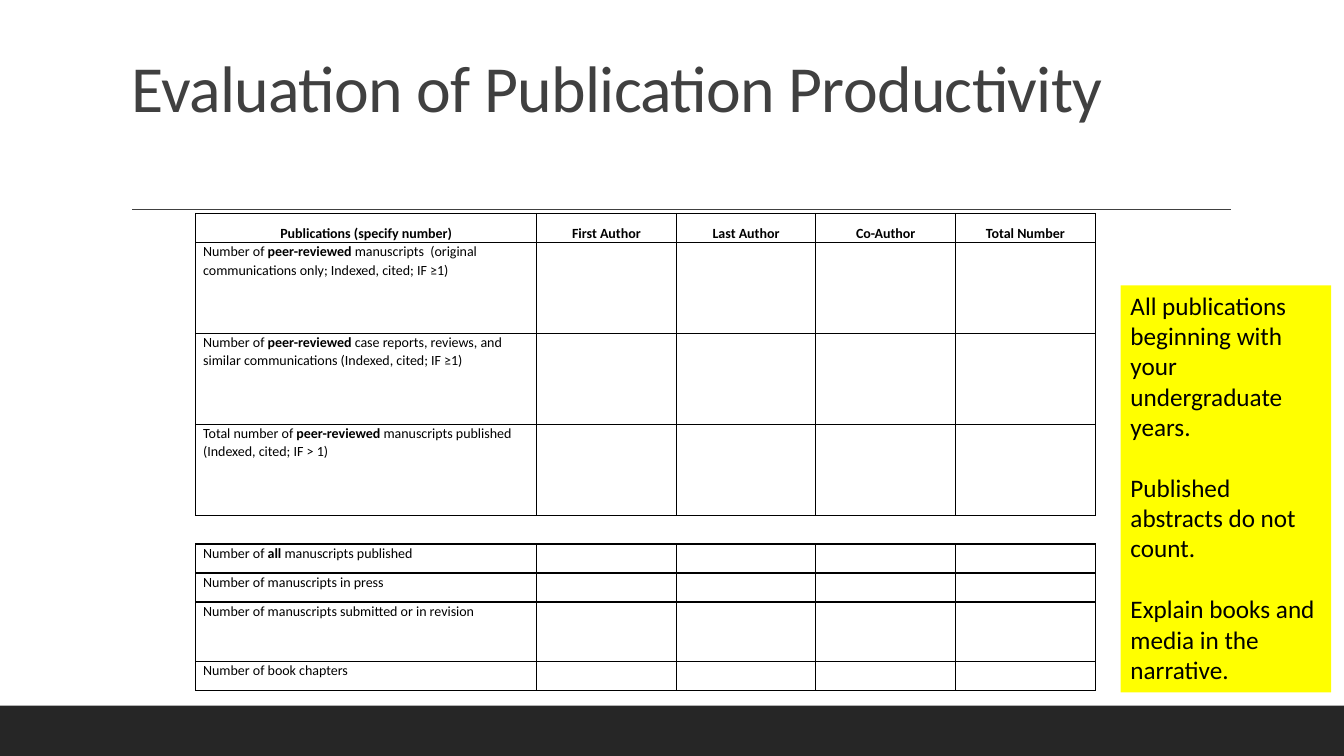
from lxml.etree import SubElement
from pptx import Presentation
from pptx.dml.color import RGBColor
from pptx.enum.shapes import MSO_CONNECTOR, MSO_SHAPE
from pptx.enum.text import MSO_ANCHOR, PP_ALIGN
from pptx.oxml import parse_xml
from pptx.oxml.ns import nsdecls, qn
from pptx.util import Cm, Pt

HEADERS = ["Publications (specify number)", "First Author", "Last Author",
           "Co-Author", "Total Number"]
ROWS = [
    (2.29, "Number of *peer-reviewed* manuscripts  (original communications only; "
           "Indexed, cited; IF ≥1)"),
    (2.29, "Number of *peer-reviewed* case reports, reviews, and similar "
           "communications (Indexed, cited; IF ≥1)"),
    (2.29, "Total number of *peer-reviewed* manuscripts published "
           "(Indexed, cited; IF > 1)"),
    (0.73, ""),
    (0.73, "Number of* all *manuscripts published"),
    (0.73, "Number of manuscripts in press"),
    (1.5, "Number of manuscripts submitted or in revision"),
    (0.73, "Number of book chapters"),
]
NOTES = ["All publications beginning with your undergraduate years.",
         "Published abstracts do not count.",
         "Explain books and media in the narrative."]


def rgb(value):
    """Return the colour for a hex string."""
    return RGBColor.from_string(value)


def add_text(p, text, size, color="000000", align=PP_ALIGN.LEFT, spacing=1.0,
             before=0, after=0, tracking=0):
    """Fill a paragraph; parts between asterisks are bold."""
    p.alignment, p.line_spacing = align, spacing
    p.space_before, p.space_after = Pt(before), Pt(after)
    if not text:
        SubElement(p._p, qn("a:endParaRPr"), sz=str(size * 100))
        return
    for i, part in enumerate(text.split("*")):
        if part:
            r = p.add_run()
            r.text = part
            r.font.name, r.font.size = "Calibri", Pt(size)
            r.font.bold = i % 2 == 1
            r.font.color.rgb = rgb(color)
            if tracking:
                r._r.get_or_add_rPr().set("spc", str(round(tracking * 100)))


def add_box(s, x, y, w, h, fill):
    """Add a plain filled rectangle."""
    sp = s.shapes.add_shape(MSO_SHAPE.RECTANGLE, Cm(x), Cm(y), Cm(w), Cm(h))
    sp.shadow.inherit = False
    sp.fill.solid()
    sp.fill.fore_color.rgb = rgb(fill)
    sp.line.fill.background()
    return sp


def add_title(s, text):
    """Add the slide title."""
    sp = s.shapes.add_textbox(Cm(3.07), Cm(0.81), Cm(27.94), Cm(2.51))
    tf = sp.text_frame
    tf.word_wrap = True
    tf.vertical_anchor = MSO_ANCHOR.BOTTOM
    add_text(tf.paragraphs[0], text, 47, "404040", spacing=0.9, tracking=-0.5)


def add_rule(s, x1, x2, y):
    """Add a thin horizontal rule."""
    line = s.shapes.add_connector(MSO_CONNECTOR.STRAIGHT, Cm(x1), Cm(y), Cm(x2), Cm(y))
    line.line.color.rgb = rgb("404040")
    line.line.width = Pt(1)
    SubElement(line._element.spPr, qn("a:effectLst"))


def set_borders(cell, sides):
    """Draw black borders on the given sides and none on the others."""
    tcPr = cell._tc.get_or_add_tcPr()
    for i, side in enumerate("LRTB"):
        fill = ('<a:solidFill><a:srgbClr val="000000"/></a:solidFill>'
                if side in sides else "<a:noFill/>")
        tcPr.insert(i, parse_xml(
            f'<a:ln{side} {nsdecls("a")} w="12700">{fill}</a:ln{side}>'))


def format_cell(cell, text, sides="LRTB", anchor=MSO_ANCHOR.TOP, align=PP_ALIGN.LEFT):
    """Write and style one table cell."""
    cell.margin_left = cell.margin_right = Cm(0.19)
    cell.margin_top = cell.margin_bottom = 0
    cell.vertical_anchor = anchor
    cell.fill.background()
    add_text(cell.text_frame.paragraphs[0], text, 10, align=align, spacing=1.07, after=8)
    set_borders(cell, sides)


def add_publications(s):
    """Add the publication count table."""
    widths = [8.59] + [3.52] * 4
    heights = [0.73] + [height for height, label in ROWS]
    table = s.shapes.add_table(len(heights), len(widths), Cm(4.93), Cm(5.38),
                               Cm(sum(widths)), Cm(sum(heights))).table
    table.first_row = table.horz_banding = False
    for column, width in zip(table.columns, widths):
        column.width = Cm(width)
    for row, height in zip(table.rows, heights):
        row.height = Cm(height)
    for j, header in enumerate(HEADERS):
        format_cell(table.cell(0, j), f"*{header}*", anchor=MSO_ANCHOR.BOTTOM,
                    align=PP_ALIGN.CENTER)
        for i, (height, label) in enumerate(ROWS, 1):
            format_cell(table.cell(i, j), label if j == 0 else "",
                        "LRTB" if label else "TB")


def add_note(s):
    """Add the highlighted note beside the table."""
    tf = add_box(s, 28.24, 7.19, 5.31, 10.26, "FFFF00").text_frame
    tf.word_wrap = True
    tf.vertical_anchor = MSO_ANCHOR.TOP
    for i, note in enumerate(NOTES):
        p = tf.add_paragraph() if i else tf.paragraphs[0]
        add_text(p, note, 18, before=22 if i else 0)


def main():
    """Build the slide and save it."""
    prs = Presentation()
    prs.slide_width, prs.slide_height = Cm(33.87), Cm(19.05)
    s = prs.slides.add_slide(prs.slide_layouts[6])
    add_box(s, 0, 17.78, 33.87, 1.27, "262626")
    add_rule(s, 3.33, 31.01, 5.28)
    add_title(s, "Evaluation of Publication Productivity")
    add_publications(s)
    add_note(s)
    prs.save("out.pptx")


if __name__ == "__main__":
    main()
